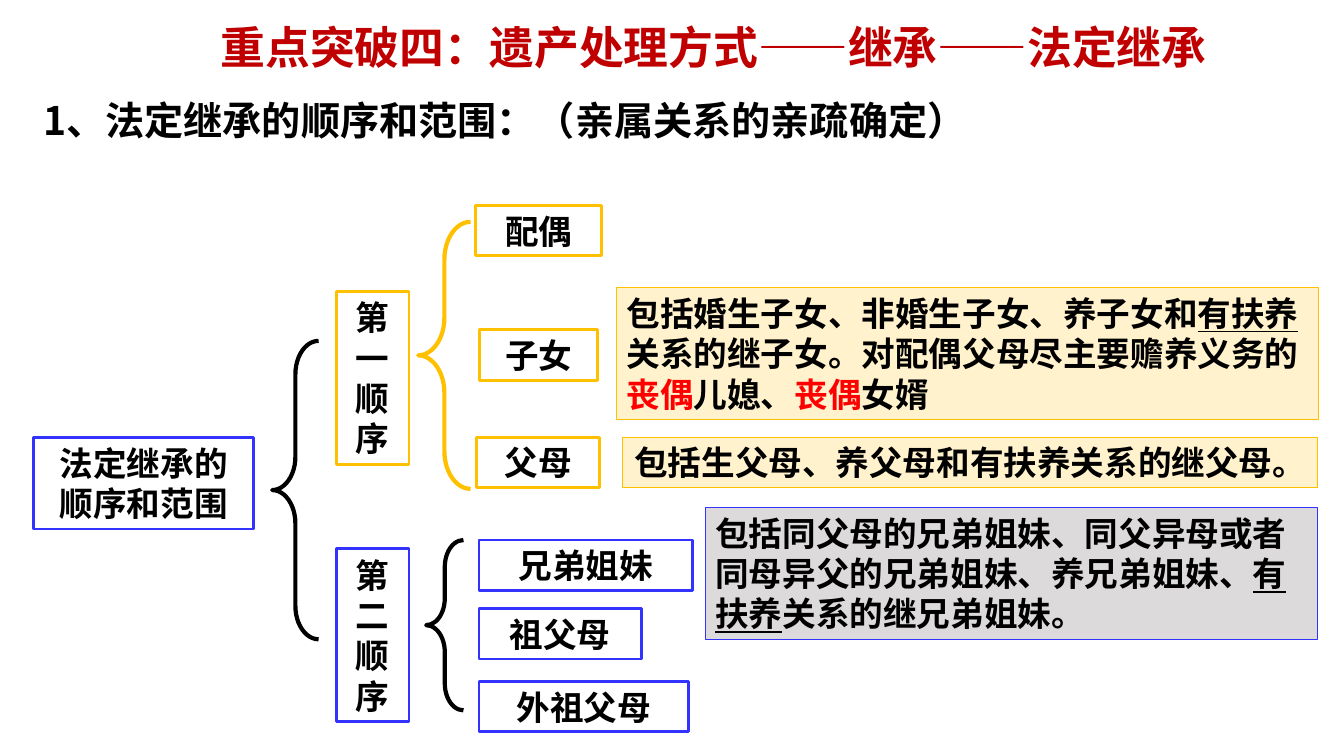
import pptx
import pptx.util
import pptx.dml.color
import pptx.enum.shapes
import pptx.enum.text
import pptx.oxml
import pptx.oxml.ns

Cm = pptx.util.Cm
Pt = pptx.util.Pt
Shape = pptx.enum.shapes.MSO_SHAPE
Align = pptx.enum.text.PP_ALIGN

COLOURS = {
    "black": "000000", "red": "FF0000", "title": "C00000",
    "gold": "FFC000", "blue": "3333FF", "cream": "FFF2CC", "grey": "DCDADA",
}
CJK = "Noto Sans CJK SC"
BOX_HEIGHT = 1.27

HEADINGS = [
    ("1、法定继承的顺序和范围：（亲属关系的亲疏确定）", 28, "black", (0.84, 2.31, 30.43, 1.45)),
    ("重点突破四：遗产处理方式——继承——法定继承", 32, "title", (5.31, 0.38, 26.11, 1.63)),
]
STEMS = [
    ("法定继承的顺序和范围", "blue", (0.84, 11.02, 5.56, 2.31)),
    ("第一顺序", "gold", (8.48, 7.34, 1.83, 4.37)),
    ("第二顺序", "blue", (8.48, 13.82, 1.83, 4.37)),
]
RELATIVES = [
    ("配偶", "gold", 11.99, 5.18, 3.18),
    ("子女", "gold", 12.09, 8.31, 2.97),
    ("父母", "gold", 12.01, 11.02, 3.1),
    ("兄弟姐妹", "blue", 12.07, 13.61, 5.38),
    ("祖父母", "blue", 12.07, 15.34, 4.09),
    ("外祖父母", "blue", 12.07, 17.17, 5.28),
]
BRACES = [
    ("black", (6.86, 8.59, 1.17, 7.52)),
    ("gold", (10.54, 5.59, 1.32, 6.73)),
    ("black", (10.74, 13.61, 0.94, 4.29)),
]
NOTES = [
    ([("包括婚生子女、非婚生子女、养子女和", "black", False), ("有扶养", "black", True),
      ("关系的继子女。对配偶父母尽主要赡养义务的", "black", False),
      ("丧偶", "red", False), ("儿媳、", "black", False),
      ("丧偶", "red", False), ("女婿", "black", False)],
     "cream", "gold", Align.LEFT, (15.54, 7.24, 17.68, 3.33)),
    ([("包括生父母、养父母和有扶养关系的继父母。", "black", False)],
     "cream", "gold", Align.CENTER, (15.7, 11.02, 17.5, BOX_HEIGHT)),
    ([("包括同父母的兄弟姐妹、同父异母或者同母异父的兄弟姐妹、养兄弟姐妹、", "black", False),
      ("有扶养", "black", True), ("关系的继兄弟姐妹。", "black", False)],
     "grey", "blue", Align.LEFT, (17.78, 12.78, 15.42, 3.33)),
]


def rgb(name):
    return pptx.dml.color.RGBColor.from_string(COLOURS[name])


def write(box, spans, size, font, align):
    frame = box.text_frame
    frame.word_wrap = True
    para = frame.paragraphs[0]
    para.alignment = align
    for text, colour, underlined in spans:
        span = para.add_run()
        span.text = text
        span.font.size = Pt(size)
        span.font.bold = True
        span.font.name = font
        span.font.color.rgb = rgb(colour)
        if underlined:
            span.font.underline = True
        asian = pptx.oxml.parse_xml(
            f'<a:ea {pptx.oxml.ns.nsdecls("a")} typeface="{CJK}"/>')
        span.font._element.find(pptx.oxml.ns.qn("a:latin")).addnext(asian)


def add_outline(page, kind, place, line, width, fill=None):
    shape = page.shapes.add_shape(kind, *map(Cm, place))
    shape.shadow.inherit = False
    shape.line.color.rgb = rgb(line)
    shape.line.width = Pt(width)
    if fill:
        shape.fill.solid()
        shape.fill.fore_color.rgb = rgb(fill)
    else:
        shape.fill.background()
    return shape


def main():
    deck = pptx.Presentation()
    deck.slide_width, deck.slide_height = Cm(33.87), Cm(19.05)
    page = deck.slides.add_slide(deck.slide_layouts[6])

    labels = STEMS + [(text, colour, (left, top, width, BOX_HEIGHT))
                      for text, colour, left, top, width in RELATIVES]
    for text, colour, place in labels:
        box = add_outline(page, Shape.RECTANGLE, place, colour, 2)
        write(box, [(text, "black", False)], 24, "Arial", Align.CENTER)

    for colour, place in BRACES:
        brace = add_outline(page, Shape.LEFT_BRACE, place, colour, 3)
        brace.adjustments[0] = 0.72

    for spans, fill, line, align, place in NOTES:
        note = add_outline(page, Shape.RECTANGLE, place, line, 0.75, fill)
        write(note, spans, 24, CJK, align)

    for text, size, colour, place in HEADINGS:
        heading = page.shapes.add_textbox(*map(Cm, place))
        write(heading, [(text, colour, False)], size, CJK, Align.LEFT)

    deck.save("out.pptx")


if __name__ == "__main__":
    main()
